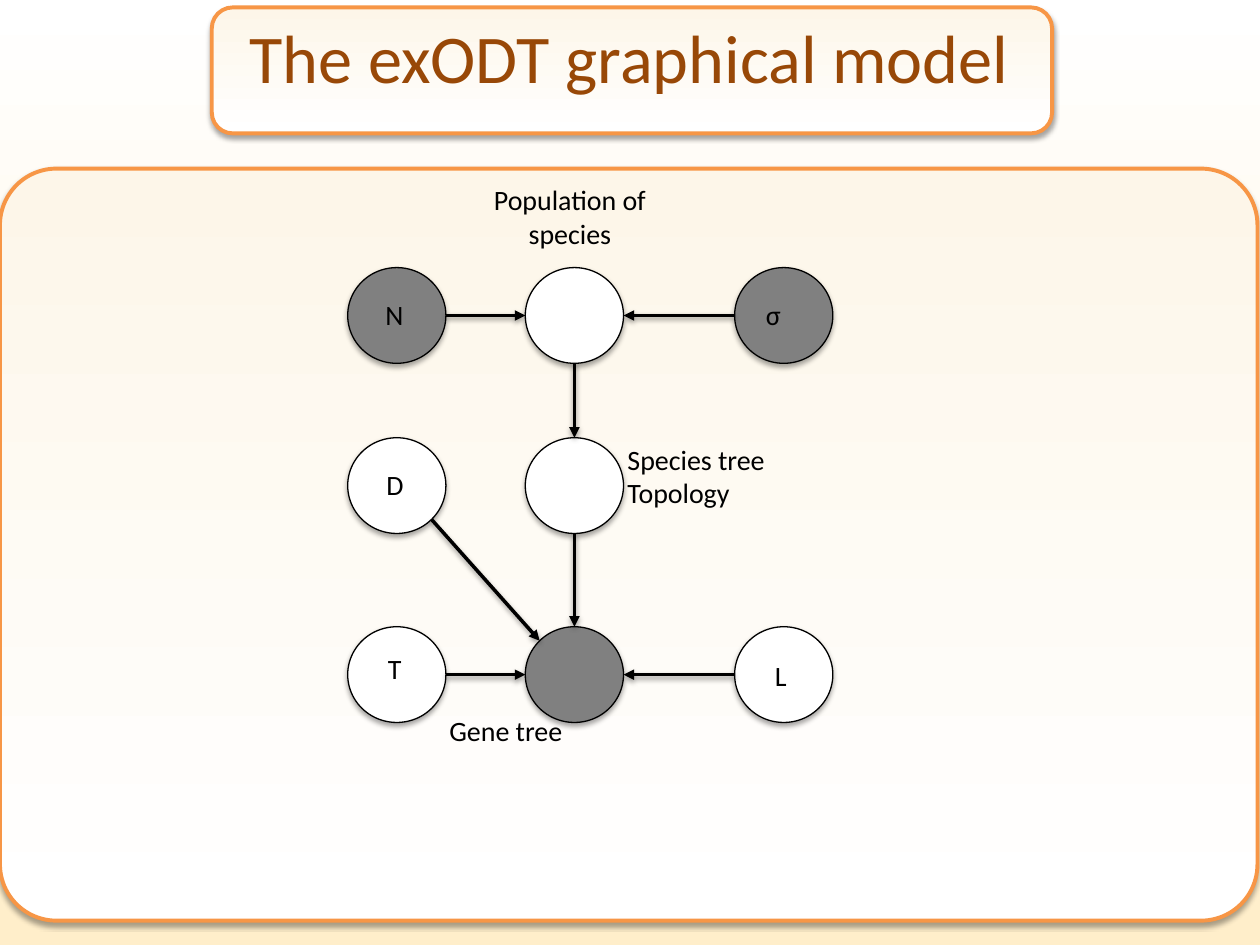
from collections import namedtuple
from math import hypot

from lxml.etree import SubElement
from pptx import Presentation
from pptx.dml.color import RGBColor
from pptx.enum.shapes import MSO_CONNECTOR as Connector, MSO_SHAPE as Preset
from pptx.enum.text import MSO_ANCHOR as Anchor, MSO_AUTO_SIZE as AutoSize, PP_ALIGN as Align
from pptx.oxml.ns import qn
from pptx.util import Cm, Pt

WHITE = RGBColor(0xFF, 0xFF, 0xFF)
BLACK = RGBColor(0x00, 0x00, 0x00)
GREY = RGBColor(0x80, 0x80, 0x80)
CREAM = RGBColor(0xFD, 0xF6, 0xE9)
SAND = RGBColor(0xFF, 0xEE, 0xCA)
ORANGE = RGBColor(0xF7, 0x96, 0x46)
BROWN = RGBColor(0x98, 0x48, 0x07)
FONT = "Calibri"
NODE_WIDTH, NODE_HEIGHT = 1.98, 1.93

Box = namedtuple("Box", "left top width height")
Node = namedtuple("Node", "x y")


def lengths(box):
    return [Cm(value) for value in box]


def set_gradient(fill, start, end, angle):
    fill.gradient()
    fill.gradient_angle = angle
    for stop, color in zip(fill.gradient_stops, (start, end)):
        stop.color.rgb = color


def add_shadow(effects, distance, opacity):
    shadow = SubElement(effects, qn("a:outerShdw"), blurRad=str(Pt(3.1)),
                        dist=str(Pt(distance)), dir="5400000", rotWithShape="0")
    color = SubElement(shadow, qn("a:srgbClr"), val=str(BLACK))
    SubElement(color, qn("a:alpha"), val=str(opacity * 1000))


def add_outlined(page, preset, box, line_color, line_width):
    shape = page.shapes.add_shape(preset, *lengths(box))
    shape.line.color.rgb = line_color
    shape.line.width = Pt(line_width)
    shape.shadow.inherit = False
    add_shadow(shape.element.spPr.find(qn("a:effectLst")), 1.8, 35)
    return shape


def add_panel(page, box):
    panel = add_outlined(page, Preset.ROUNDED_RECTANGLE, box, ORANGE, 2.25)
    set_gradient(panel.fill, WHITE, CREAM, 90)
    return panel


def format_text(frame, size, color, align):
    for para in frame.paragraphs:
        para.alignment = align
        for span in para.runs:
            span.font.name = FONT
            span.font.size = Pt(size)
            span.font.color.rgb = color


def add_label(page, box, text, align=Align.LEFT):
    frame = page.shapes.add_textbox(*lengths(box)).text_frame
    frame.word_wrap = True
    frame.text = text
    format_text(frame, 16, BLACK, align)


def add_node(page, node, color):
    box = Box(node.x - NODE_WIDTH / 2, node.y - NODE_HEIGHT / 2, NODE_WIDTH, NODE_HEIGHT)
    circle = add_outlined(page, Preset.OVAL, box, BLACK, 0.75)
    circle.fill.solid()
    circle.fill.fore_color.rgb = color


def sign(value):
    return (value > 0) - (value < 0)


def add_arrow(page, start, end):
    across, down = sign(end.x - start.x), sign(end.y - start.y)
    norm = hypot(across, down)
    reach_x = across / norm * NODE_WIDTH / 2
    reach_y = down / norm * NODE_HEIGHT / 2
    arrow = page.shapes.add_connector(
        Connector.STRAIGHT, Cm(start.x + reach_x), Cm(start.y + reach_y),
        Cm(end.x - reach_x), Cm(end.y - reach_y))
    arrow.line.color.rgb = BLACK
    arrow.line.width = Pt(2)
    properties = arrow.element.spPr
    SubElement(properties.find(qn("a:ln")), qn("a:tailEnd"), type="triangle")
    add_shadow(SubElement(properties, qn("a:effectLst")), 1.6, 38)


def add_heading(page, box):
    title = page.shapes.title
    title.element.addprevious(add_panel(page, box).element)
    title.left, title.top, title.width, title.height = lengths(
        Box(box.left - 0.71, box.top - 0.43, box.width + 1.3, box.height + 0.28))
    frame = title.text_frame
    frame.text = "The exODT graphical model"
    frame.auto_size = AutoSize.NONE
    frame.vertical_anchor = Anchor.MIDDLE
    format_text(frame, 39, BROWN, Align.CENTER)


def add_model(page, box):
    add_panel(page, box).adjustments[0] = 0.075
    left, middle, right = (box.left + offset for offset in (8, 11.58, 15.8))
    upper, centre, lower = (box.top + offset for offset in (2.96, 6.39, 10.2))
    size, sigma = Node(left, upper), Node(right, upper)
    population, topology, gene = (Node(middle, y) for y in (upper, centre, lower))
    duplication, transfer, loss = Node(left, centre), Node(left, lower), Node(right, lower)

    for node in (size, sigma, gene):
        add_node(page, node, GREY)
    for node in (population, topology, duplication, transfer, loss):
        add_node(page, node, WHITE)
    for start, end in ((size, population), (sigma, population), (population, topology),
                       (topology, gene), (duplication, gene), (transfer, gene), (loss, gene)):
        add_arrow(page, start, end)

    for symbol, node, shift_x, shift_y in (
            ("N", size, -0.48, -0.48), ("σ", sigma, -0.61, -0.48),
            ("D", duplication, -0.46, -0.48), ("T", transfer, -0.43, -0.6),
            ("L", loss, -0.43, -0.45)):
        add_label(page, Box(node.x + shift_x, node.y + shift_y, 1.15, 0.94), symbol)
    add_label(page, Box(box.left + 9.37, box.top + 0.16, 4.24, 1.63),
              "Population of species", Align.CENTER)
    add_label(page, Box(box.left + 12.4, box.top + 5.39, 6.99, 1.63), "Species tree\nTopology")
    add_label(page, Box(box.left + 8.81, box.top + 10.85, 6.99, 0.94), "Gene tree")


def main():
    deck = Presentation()
    deck.slide_width, deck.slide_height = Cm(25.4), Cm(19.05)
    page = deck.slides.add_slide(deck.slide_layouts[5])
    set_gradient(page.background.fill, WHITE, SAND, 270)
    add_heading(page, Box(4.27, 0.15, 16.94, 2.54))
    add_model(page, Box(0, 3.4, 25.35, 15.16))
    deck.save("out.pptx")


if __name__ == "__main__":
    main()
